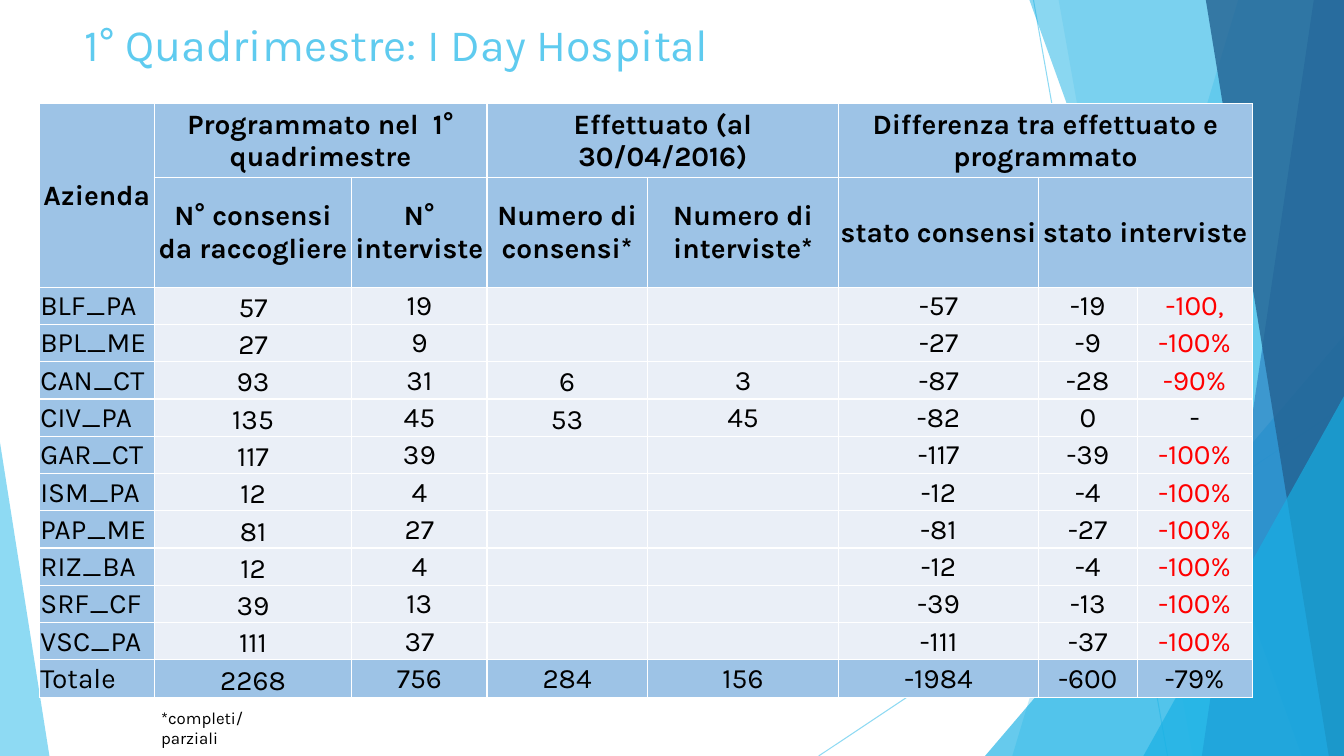
from pptx import Presentation
from pptx.dml.color import RGBColor
from pptx.enum.shapes import MSO_CONNECTOR
from pptx.enum.text import MSO_ANCHOR, PP_ALIGN
from pptx.oxml.ns import qn
from pptx.util import Inches, Pt
from lxml.etree import SubElement

W, H = 13.33, 7.5
FONT = "Karla"
BLACK, RED, WHITE = "000000", "FF0000", "FFFFFF"
SKY, BLUE, HEAD, BODY = "5FCBEF", "17B0E4", "9DC3E6", "EAEFF7"

TITLE = "1° Quadrimestre: I Day Hospital"
NOTE = "*completi/parziali"

RAYS = [((10.25, 0), (11.58, H)), ((W, 4.03), (8.12, H))]
FACETS = [
    (SKY, 36, [(12.28, 0), (W, 0), (W, H), (10.04, H)]),
    (SKY, 20, [(10.5, 0), (W, 0), (W, H), (11.83, H)]),
    (BLUE, 66, [(9.77, H), (W, 3.33), (W, H)]),
    (BLUE, 50, [(10.21, 0), (W, 0), (W, H), (12.91, H)]),
    ("2E83C3", 70, [(13.03, 0), (W, 0), (W, H), (11.92, H)]),
    ("236292", 80, [(11.96, 0), (W, 0), (W, H), (13.18, H)]),
    (BLUE, 66, [(11.34, H), (W, 3.93), (W, H)]),
    (SKY, 70, [(0, H), (0, 4.39), (0.49, H)]),
]

COLS = [1.14, 1.96, 1.34, 1.59, 1.9, 1.98, 0.98, 1.14]
HEAD_ROWS, BODY_ROW = [0.73, 1.09], 0.37
MERGES = [((0, 0), (1, 0)), ((0, 1), (0, 2)), ((0, 3), (0, 4)),
          ((0, 5), (0, 7)), ((1, 6), (1, 7))]
ROWS = [
    ("Azienda", "Programmato nel  1° quadrimestre", "", "Effettuato (al 30/04/2016)", "",
     "Differenza tra effettuato e programmato", "", ""),
    ("", "N° consensi da raccogliere", "N° interviste", "Numero di consensi*",
     "Numero di interviste*", "stato consensi", "stato interviste", ""),
    ("BLF_PA", "57", "19", "", "", "-57", "-19", "-100,"),
    ("BPL_ME", "27", "9", "", "", "-27", "-9", "-100%"),
    ("CAN_CT", "93", "31", "6", "3", "-87", "-28", "-90%"),
    ("CIV_PA", "135", "45", "53", "45", "-82", "0", "-"),
    ("GAR_CT", "117", "39", "", "", "-117", "-39", "-100%"),
    ("ISM_PA", "12", "4", "", "", "-12", "-4", "-100%"),
    ("PAP_ME", "81", "27", "", "", "-81", "-27", "-100%"),
    ("RIZ_BA", "12", "4", "", "", "-12", "-4", "-100%"),
    ("SRF_CF", "39", "13", "", "", "-39", "-13", "-100%"),
    ("VSC_PA", "111", "37", "", "", "-111", "-37", "-100%"),
    ("Totale", "2268", "756", "284", "156", "-1984", "-600", "-79%"),
]


def rgb(color):
    return RGBColor.from_string(color)


def paint(fill, color, alpha=100):
    fill.solid()
    fill.fore_color.rgb = rgb(color)
    if alpha < 100:
        clr = fill._xPr.find(qn("a:solidFill"))[0]
        SubElement(clr, qn("a:alpha"), val=str(alpha * 1000))


def write(tf, text, size, color=BLACK, bold=False, align=PP_ALIGN.LEFT):
    tf.text = text
    p = tf.paragraphs[0]
    p.alignment = align
    for font in [p.font] + [r.font for r in p.runs]:
        font.name, font.size, font.bold = FONT, Pt(size), bold
        font.color.rgb = rgb(color)


def add_ray(s, start, end):
    ray = s.shapes.add_connector(MSO_CONNECTOR.STRAIGHT, *map(Inches, start + end))
    ray.line.width = Pt(0.75)
    paint(ray.line.fill, SKY, 70)
    SubElement(ray._element.spPr, qn("a:effectLst"))


def add_facet(s, color, alpha, points):
    first, *rest = [(Inches(x), Inches(y)) for x, y in points]
    builder = s.shapes.build_freeform(*first)
    builder.add_line_segments(rest)
    sp = builder.convert_to_shape()
    sp.shadow.inherit = False
    sp.line.fill.background()
    paint(sp.fill, color, alpha)


def add_label(s, box, text, size, color):
    tf = s.shapes.add_textbox(*map(Inches, box)).text_frame
    tf.word_wrap = True
    write(tf, text, size, color)


def add_borders(cell):
    tcPr = cell._tc.get_or_add_tcPr()
    for i, side in enumerate(("a:lnL", "a:lnR", "a:lnT", "a:lnB")):
        ln = tcPr.makeelement(qn(side), {"w": str(Pt(1))})
        SubElement(SubElement(ln, qn("a:solidFill")), qn("a:srgbClr"), val=WHITE)
        tcPr.insert(i, ln)


def format_cell(cell, row, col, text):
    header, total = row < len(HEAD_ROWS), row == len(ROWS) - 1
    lost = col == len(COLS) - 1 and not (header or total) and text != "-"
    name = col == 0 and not header
    write(cell.text_frame, text, 20, RED if lost else BLACK, header,
          PP_ALIGN.LEFT if name else PP_ALIGN.CENTER)
    low = not header and (col == 1 or (col == 3 and not total))
    cell.vertical_anchor = MSO_ANCHOR.BOTTOM if low else MSO_ANCHOR.MIDDLE
    cell.margin_left = cell.margin_right = cell.margin_top = Inches(0.01)
    cell.margin_bottom = 0
    paint(cell.fill, HEAD if header or total or col == 0 else BODY)
    add_borders(cell)


def add_results(s):
    heights = HEAD_ROWS + [BODY_ROW] * (len(ROWS) - len(HEAD_ROWS))
    box = (0.39, 1.03, sum(COLS), sum(heights))
    table = s.shapes.add_table(len(ROWS), len(COLS), *map(Inches, box)).table
    table.first_row = table.horz_banding = False
    for column, width in zip(table.columns, COLS):
        column.width = Inches(width)
    for i, (row, height) in enumerate(zip(table.rows, heights)):
        row.height = Inches(height)
        for j, cell in enumerate(row.cells):
            format_cell(cell, i, j, ROWS[i][j])
    for first, last in MERGES:
        table.cell(*first).merge(table.cell(*last))


def main():
    """Build the quarterly Day Hospital results slide."""
    prs = Presentation()
    prs.slide_width, prs.slide_height = Inches(W), Inches(H)
    s = prs.slides.add_slide(prs.slide_layouts[6])
    for ray in RAYS:
        add_ray(s, *ray)
    for facet in FACETS:
        add_facet(s, *facet)
    add_label(s, (0.74, 0.12, 9.4, 0.59), TITLE, 32, SKY)
    add_results(s)
    add_label(s, (1.5, 6.97, 1.5, 0.3), NOTE, 12, BLACK)
    prs.save("out.pptx")


if __name__ == "__main__":
    main()
